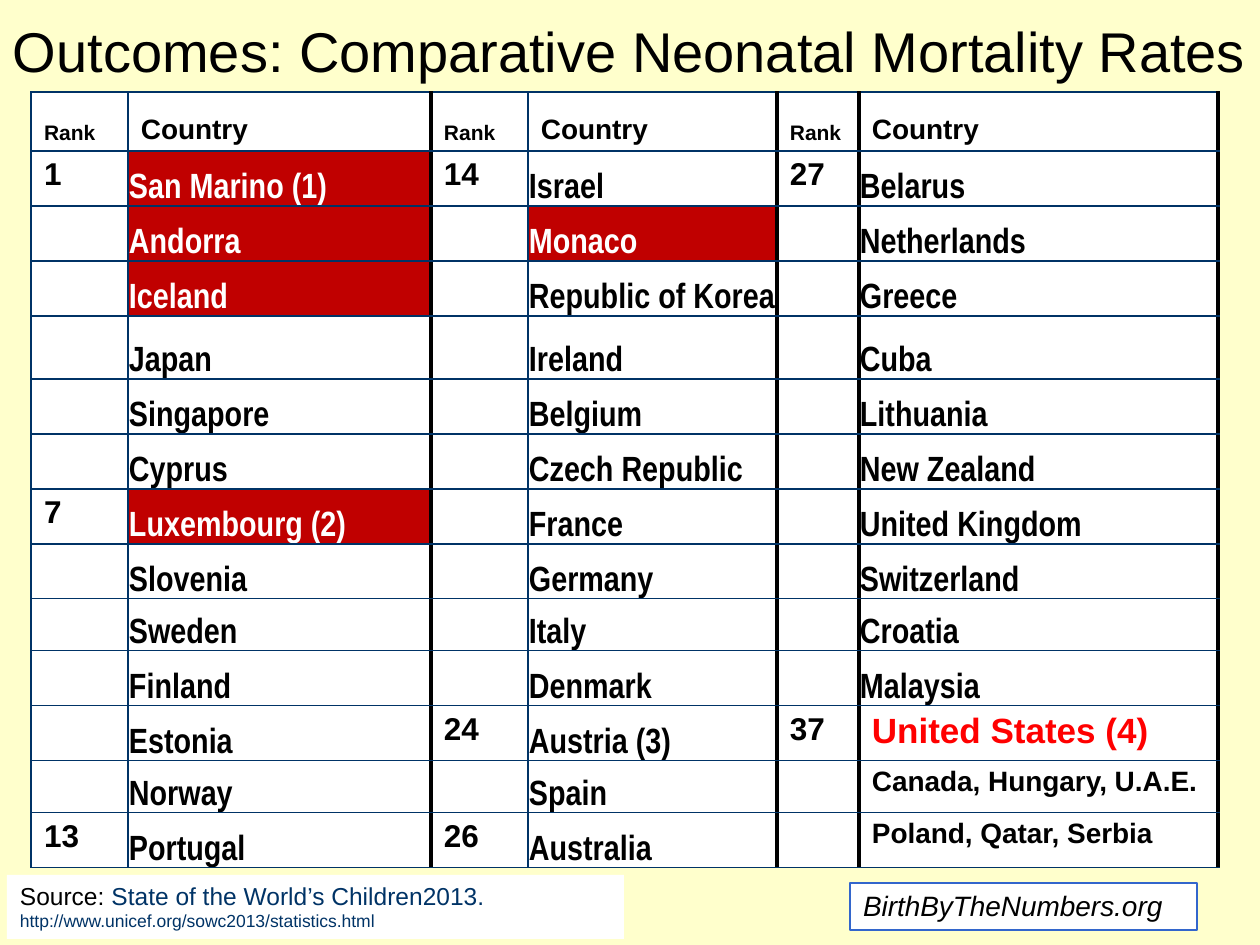
from dataclasses import dataclass

from lxml import etree
from pptx import Presentation
from pptx.dml.color import RGBColor
from pptx.enum.shapes import MSO_SHAPE
from pptx.enum.text import MSO_ANCHOR, PP_ALIGN
from pptx.oxml.ns import qn
from pptx.util import Emu, Pt

RECTANGLE = MSO_SHAPE.RECTANGLE
TOP, MIDDLE, BOTTOM = MSO_ANCHOR.TOP, MSO_ANCHOR.MIDDLE, MSO_ANCHOR.BOTTOM
LEFT, CENTER = PP_ALIGN.LEFT, PP_ALIGN.CENTER


@dataclass(frozen=True)
class Theme:
    background: str = "FFFFCC"
    paper: str = "FFFFFF"
    ink: str = "000000"
    navy: str = "003366"
    frame: str = "3366CC"
    highlight: str = "C00000"
    alert: str = "FF0000"
    sans: str = "Arial"
    narrow: str = "Arial Narrow"
    title: int = 32
    country: int = 20
    rank: int = 18
    label: int = 16
    source: int = 14
    small: int = 12
    link: int = 10


THEME = Theme()
EMU_PER_PX = 914400 / 126
WIDE_MARGINS = (13, 6, 13, 6)
TIGHT_MARGINS = (1, 1, 0, 0)
THIN, THICK = (THEME.navy, 1), (THEME.ink, 3)
COLUMN_EDGES = [THIN, THIN, THICK, THIN, THICK, THICK, THICK]
COLUMN_WIDTHS = [97, 303, 97, 249, 82, 359]
HEADER_HEIGHT, ROW_HEIGHT = 59, 55
SPECIAL_HEIGHTS = {4: 63, 9: 52, 12: 52}

GROUPS = [
    ({1: "1", 7: "7", 13: "13"},
     ["San Marino (1)", "Andorra", "Iceland", "Japan", "Singapore", "Cyprus",
      "Luxembourg (2)", "Slovenia", "Sweden", "Finland", "Estonia", "Norway",
      "Portugal"]),
    ({1: "14", 11: "24", 13: "26"},
     ["Israel", "Monaco", "Republic of Korea", "Ireland", "Belgium",
      "Czech Republic", "France", "Germany", "Italy", "Denmark",
      "Austria (3)", "Spain", "Australia"]),
    ({1: "27", 11: "37"},
     ["Belarus", "Netherlands", "Greece", "Cuba", "Lithuania", "New Zealand",
      "United Kingdom", "Switzerland", "Croatia", "Malaysia",
      "United States (4)", "Canada, Hungary, U.A.E.",
      "Poland, Qatar, Serbia"]),
]
HIGHLIGHTED = {"San Marino (1)", "Andorra", "Iceland", "Luxembourg (2)", "Monaco"}
FOOTNOTED = {"Canada, Hungary, U.A.E.", "Poland, Qatar, Serbia"}


def px(length):
    return Emu(round(length * EMU_PER_PX))


def rgb(value):
    return RGBColor.from_string(value)


def paint(fill, color):
    fill.solid()
    fill.fore_color.rgb = rgb(color)


def add_run(paragraph, text, size, color=THEME.ink, name=THEME.sans, **format_values):
    run = paragraph.add_run()
    run.text = text
    values = {"size": Pt(size), "name": name, **format_values}
    for attribute, value in values.items():
        setattr(run.font, attribute, value)
    run.font.color.rgb = rgb(color)


def set_margins(target, margins):
    for side, margin in zip(("left", "top", "right", "bottom"), margins):
        setattr(target, f"margin_{side}", px(margin))


def add_title(slide, text):
    shape = slide.shapes.add_textbox(0, 0, px(1260), px(100))
    frame = shape.text_frame
    frame.word_wrap = True
    frame.vertical_anchor = MIDDLE
    set_margins(frame, (0, 6, 0, 6))
    paragraph = frame.paragraphs[0]
    paragraph.alignment = CENTER
    add_run(paragraph, text, THEME.title)


def add_panel(slide, box, runs, outline=None):
    shape = slide.shapes.add_shape(RECTANGLE, *map(px, box))
    shape.shadow.inherit = False
    paint(shape.fill, THEME.paper)
    if outline:
        shape.line.color.rgb = rgb(outline)
        shape.line.width = Pt(0.75)
    else:
        shape.line.fill.background()
    frame = shape.text_frame
    frame.word_wrap = True
    frame.vertical_anchor = TOP
    set_margins(frame, WIDE_MARGINS)
    paragraph = frame.paragraphs[0]
    paragraph.alignment = LEFT
    for values in runs:
        add_run(paragraph, **values)


def add_borders(cell, column):
    properties = cell._tc.get_or_add_tcPr()
    edges = {"L": COLUMN_EDGES[column], "R": COLUMN_EDGES[column + 1],
             "T": THIN, "B": THIN}
    for side, (color, width) in edges.items():
        line = etree.SubElement(properties, qn(f"a:ln{side}"), w=str(Pt(width)))
        fill = etree.SubElement(line, qn("a:solidFill"))
        etree.SubElement(fill, qn("a:srgbClr"), val=color)


def fill_cell(table, row, column, text, size, anchor=TOP, margins=WIDE_MARGINS,
              fill=THEME.paper, **format_values):
    cell = table.cell(row, column)
    add_borders(cell, column)
    paint(cell.fill, fill)
    cell.vertical_anchor = anchor
    set_margins(cell, margins)
    if text:
        add_run(cell.text_frame.paragraphs[0], text, size, bold=True, **format_values)


def country_format(country):
    if country == "United States (4)":
        return {"size": THEME.country, "color": THEME.alert}
    if country in FOOTNOTED:
        return {"size": THEME.label}
    values = {"size": THEME.country, "name": THEME.narrow,
              "anchor": BOTTOM, "margins": TIGHT_MARGINS}
    if country in HIGHLIGHTED:
        values.update(fill=THEME.highlight, color=THEME.paper)
    return values


def add_ranking(slide):
    row_count = len(GROUPS[0][1])
    heights = [HEADER_HEIGHT] + [SPECIAL_HEIGHTS.get(row, ROW_HEIGHT)
                                 for row in range(1, row_count + 1)]
    table = slide.shapes.add_table(
        len(heights), len(COLUMN_WIDTHS), px(31), px(92),
        px(sum(COLUMN_WIDTHS)), px(sum(heights))).table
    table.first_row = table.horz_banding = False
    for column, width in zip(table.columns, COLUMN_WIDTHS):
        column.width = px(width)
    for row, height in zip(table.rows, heights):
        row.height = px(height)
    for group, (ranks, countries) in enumerate(GROUPS):
        column = 2 * group
        fill_cell(table, 0, column, "Rank", THEME.small, BOTTOM)
        fill_cell(table, 0, column + 1, "Country", THEME.label, BOTTOM)
        for row, country in enumerate(countries, 1):
            fill_cell(table, row, column, ranks.get(row), THEME.rank)
            fill_cell(table, row, column + 1, country, **country_format(country))


def main():
    presentation = Presentation()
    presentation.slide_width, presentation.slide_height = px(1260), px(945)
    slide = presentation.slides.add_slide(presentation.slide_layouts[6])
    paint(slide.background.fill, THEME.background)
    add_title(slide, "Outcomes: Comparative Neonatal Mortality Rates")
    add_ranking(slide)
    add_panel(slide, (7, 875, 617, 64), [
        {"text": "Source: ", "size": THEME.source},
        {"text": "State of the World’s Children2013. ", "size": THEME.source,
         "color": THEME.navy},
        {"text": "http://www.unicef.org/sowc2013/statistics.html",
         "size": THEME.link, "color": THEME.navy},
    ])
    add_panel(slide, (850, 883, 347, 47), [
        {"text": "BirthByTheNumbers.org", "size": THEME.label, "italic": True},
    ], THEME.frame)
    presentation.save("out.pptx")


if __name__ == "__main__":
    main()
